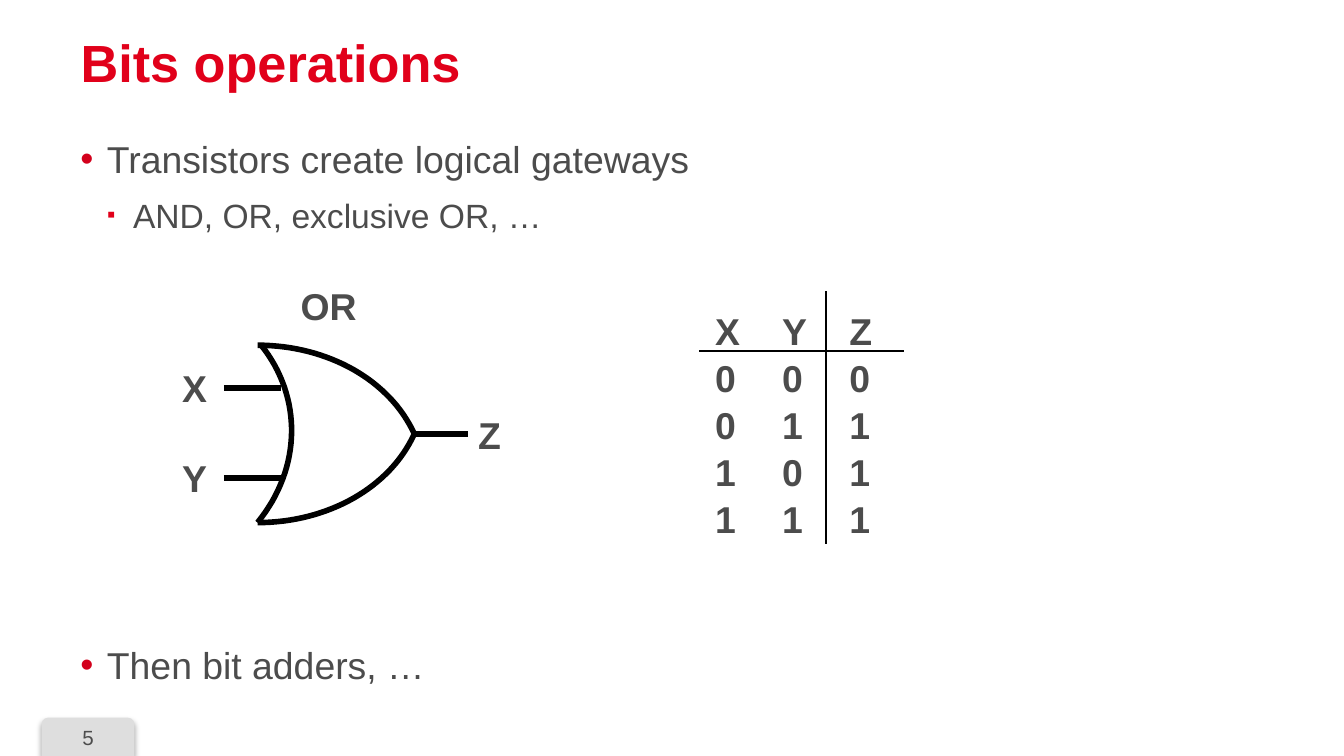
"""Build a slide on logic gates with an OR gate and its truth table."""
from typing import NamedTuple

from lxml import etree
from pptx import Presentation
from pptx.dml.color import RGBColor
from pptx.enum import shapes as kinds, text as t
from pptx.oxml import ns
from pptx.util import Pt

RED, GREY, BLACK = "E1001A", "4C4C4C", "000000"


class Label(NamedTuple):
    text: str
    x: float
    y: float
    w: float
    h: float = 31.5


class Wire(NamedTuple):
    x1: float
    y1: float
    x2: float
    y2: float
    width: float = 3


class Arc(NamedTuple):
    start: tuple
    pull: tuple
    push: tuple
    end: tuple


class Item(NamedTuple):
    text: str
    size: float
    level: int
    indent: float
    hang: float
    before: float
    mark: str
    tint: str
    scale: int


LABELS = [
    Label("OR", 154, 147, 44.6),
    Label("X", 90.5, 191, 28),
    Label("Y", 90.5, 239, 28),
    Label("Z", 249, 216, 26.5),
]
TABLE = Label("X\tY\tZ\n0\t0\t0\n0\t1\t1\n1\t0\t1\n1\t1\t1", 376, 160.5, 99.5, 128)
WIRES = [
    Wire(120, 208, 150.5, 208),
    Wire(120, 256, 150.5, 256),
    Wire(222, 232.5, 251, 232.5),
    Wire(374.5, 188, 484.5, 188, 0.75),
    Wire(442.5, 156, 442.5, 291.5, 0.75),
]
ARCS = [
    Arc((138, 185), (176, 185), (209, 204), (222, 232.5)),
    Arc((138, 280), (176, 280), (209, 261), (222, 232.5)),
    Arc((140, 185), (162, 212.5), (162, 250.5), (138, 280)),
]
ITEMS = [
    Item("Transistors create logical gateways", 20, 0, 14.2, 14.2, 6, "•", "D3001C", 100),
    Item("AND, OR, exclusive OR, …", 18, 1, 28.2, 13.9, 6, "▪", RED, 70),
    Item("Then bit adders, …", 20, 0, 14.2, 14.2, 217, "•", "D3001C", 100),
]


def color(code: str) -> RGBColor:
    """Turn a hex string into a colour."""
    return RGBColor.from_string(code)


def node(parent, tag: str, **attrs):
    """Append a DrawingML element."""
    return etree.SubElement(parent, ns.qn(tag), {k: str(v) for k, v in attrs.items()})


def style(par, size: float, tint: str = GREY, bold: bool = False, gap: float = 1.05) -> None:
    """Format a paragraph and its runs."""
    par.line_spacing = gap
    for run in par.runs:
        font = run.font
        font.name, font.size, font.bold = "Arial", Pt(size), bold
        font.color.rgb = color(tint)


def place(shape, x: float, y: float, w: float, h: float) -> None:
    """Move and size a shape."""
    shape.left, shape.top, shape.width, shape.height = Pt(x), Pt(y), Pt(w), Pt(h)


def write(slide, label: Label):
    """Add a bold label."""
    box = slide.shapes.add_textbox(Pt(label.x), Pt(label.y), Pt(label.w), Pt(label.h))
    frame = box.text_frame
    frame.text = label.text
    frame.word_wrap = False
    frame.auto_size = t.MSO_AUTO_SIZE.SHAPE_TO_FIT_TEXT
    for par in frame.paragraphs:
        style(par, 20, bold=True)
    return box


def tabulate(slide, label: Label) -> None:
    """Add the truth table with even tab stops."""
    for par in write(slide, label).text_frame.paragraphs:
        stops = node(par._p.get_or_add_pPr(), "a:tabLst")
        for col in (1, 2):
            node(stops, "a:tab", pos=Pt(36 * col), algn="l")


def connect(slide, wire: Wire) -> None:
    """Draw a straight line."""
    ends = [Pt(v) for v in wire[:4]]
    line = slide.shapes.add_connector(kinds.MSO_CONNECTOR.STRAIGHT, *ends)
    line.line.color.rgb = color(BLACK)
    line.line.width = Pt(wire.width)
    node(line._element.spPr, "a:effectLst")


def bend(slide, arc: Arc, steps: int = 32) -> None:
    """Draw a cubic curve as an open outline."""
    dots = []
    for i in range(steps + 1):
        f = i / steps
        g = 1 - f
        parts = (g ** 3, 3 * g * g * f, 3 * g * f * f, f ** 3)
        dots.append(tuple(Pt(sum(k * p[n] for k, p in zip(parts, arc))) for n in (0, 1)))
    pen = slide.shapes.build_freeform(*dots[0])
    pen.add_line_segments(dots[1:], close=False)
    curve = pen.convert_to_shape()
    curve.fill.background()
    curve.line.color.rgb = color(BLACK)
    curve.line.width = Pt(3)
    curve.shadow.inherit = False


def outline(slide, items: list[Item]) -> None:
    """Add the bulleted text."""
    box = slide.shapes.add_textbox(Pt(36), Pt(68.4), Pt(662.4), Pt(240))
    frame = box.text_frame
    frame.word_wrap = True
    frame.text = "\n".join(item.text for item in items)
    for par, item in zip(frame.paragraphs, items):
        style(par, item.size)
        par.level = item.level
        par.space_before = Pt(item.before if par.text != items[0].text else 0)
        props = par._p.get_or_add_pPr()
        props.set("marL", str(Pt(item.indent)))
        props.set("indent", str(-Pt(item.hang)))
        node(node(props, "a:buClr"), "a:srgbClr", val=item.tint)
        node(props, "a:buSzPct", val=item.scale * 1000)
        node(props, "a:buFont", typeface="Arial")
        node(props, "a:buChar", char=item.mark)


def number(slide, value: str) -> None:
    """Add the page number tab with a soft shadow."""
    tab = slide.shapes.add_shape(
        kinds.MSO_SHAPE.ROUND_2_SAME_RECTANGLE, Pt(22.3), Pt(384.5), Pt(49.7), Pt(20.5))
    tab.fill.solid()
    tab.fill.fore_color.rgb = color("DEDEDE")
    tab.line.fill.background()
    tab.shadow.inherit = False
    glow = node(tab._element.spPr.find(ns.qn("a:effectLst")), "a:outerShdw",
                blurRad=Pt(3.1), dist=Pt(1.8), dir=5400000, rotWithShape=0)
    node(node(glow, "a:srgbClr", val=BLACK), "a:alpha", val=35000)
    frame = tab.text_frame
    frame.text = value
    frame.vertical_anchor = t.MSO_ANCHOR.MIDDLE
    frame.paragraphs[0].alignment = t.PP_ALIGN.CENTER
    style(frame.paragraphs[0], 11, gap=1.0)


def main() -> None:
    """Build and save the slide."""
    deck = Presentation()
    deck.slide_width, deck.slide_height = Pt(720), Pt(405)
    slide = deck.slides.add_slide(deck.slide_layouts[5])
    number(slide, "5")
    title = slide.shapes.title
    place(title, 36, 10.8, 662.4, 46.8)
    frame = title.text_frame
    frame.text = "Bits operations"
    frame.vertical_anchor = t.MSO_ANCHOR.TOP
    frame.auto_size = t.MSO_AUTO_SIZE.NONE
    frame.paragraphs[0].alignment = t.PP_ALIGN.LEFT
    style(frame.paragraphs[0], 28, RED, True)
    outline(slide, ITEMS)
    for arc in ARCS:
        bend(slide, arc)
    for wire in WIRES:
        connect(slide, wire)
    for label in LABELS:
        write(slide, label)
    tabulate(slide, TABLE)
    deck.save("out.pptx")


if __name__ == "__main__":
    main()
